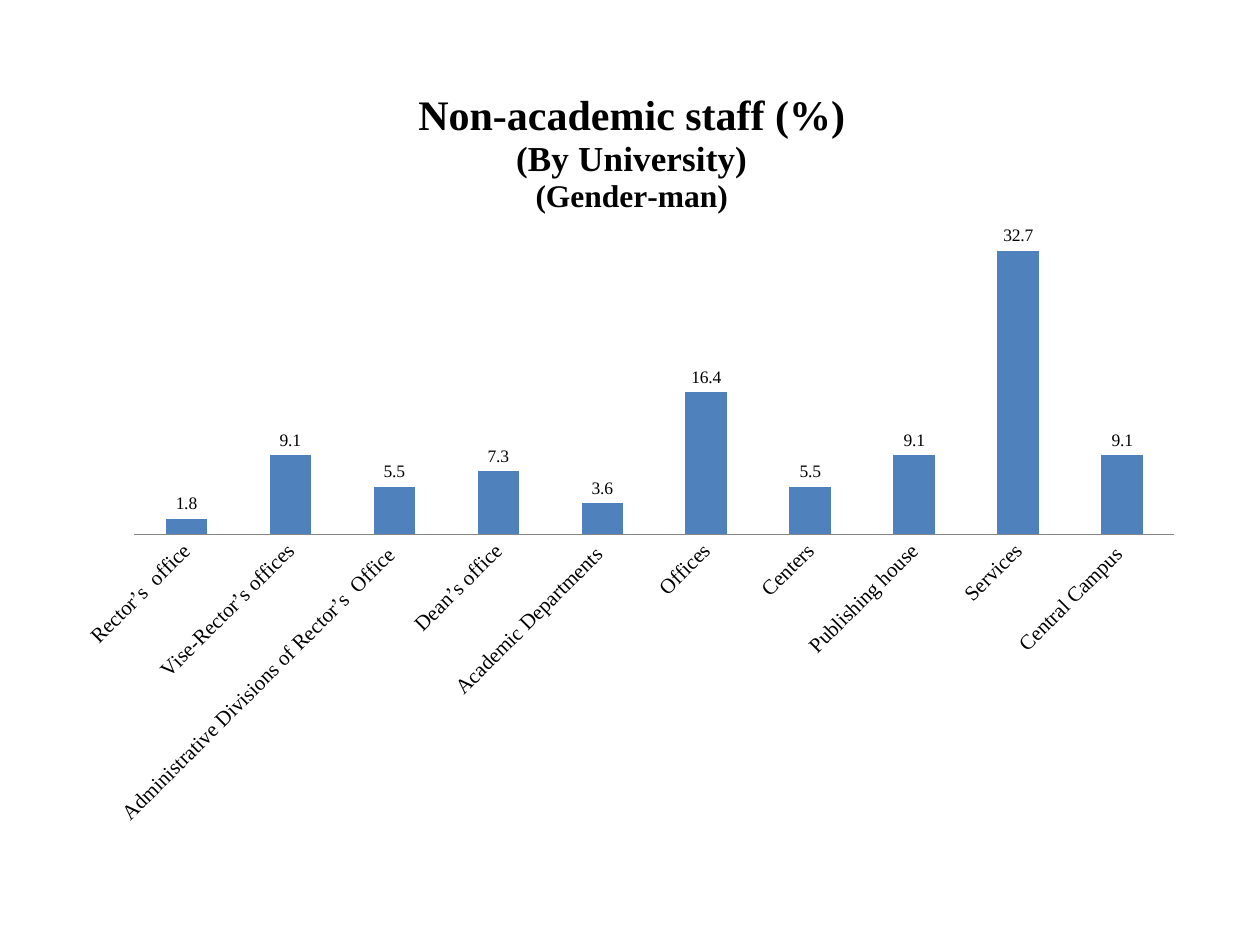
import pptx
import pptx.chart.data
import pptx.dml.color
import pptx.enum.chart
import pptx.oxml
import pptx.oxml.ns
import pptx.util

WIDE, HIGH = 10, 7.5
FACE = "Times New Roman"
COLORS = {"bar": "4F81BD", "text": "000000", "axis": "868686"}
HEADS = [("Non-academic staff (%)", 24), ("(By University)", 20),
         ("(Gender-man)", 18)]
STAFF = [
    ("Rector’s  office", 1.8),
    ("Vise-Rector’s offices", 9.1),
    (" Administrative Divisions of Rector’s  Office ", 5.5),
    ("Dean’s office", 7.3),
    ("Academic Departments ", 3.6),
    ("Offices", 16.4),
    ("Centers", 5.5),
    ("Publishing house", 9.1),
    ("Services", 32.7),
    ("Central Campus ", 9.1),
]


def color(name):
    return pptx.dml.color.RGBColor.from_string(COLORS[name])


def style(font, size, face=FACE, bold=False):
    font.name, font.size, font.bold = face, pptx.util.Pt(size), bold
    font.color.rgb = color("text")


def place(node, index, inner=False, **shares):
    """Set a manual layout, in shares of the chart's size."""
    for old in node.findall(pptx.oxml.ns.qn("c:layout")):
        node.remove(old)
    modes = {"xMode": "edge", "yMode": "edge"}
    if inner:
        modes = {"layoutTarget": "inner", **modes}
    marks = "".join(f'<c:{key} val="{val}"/>'
                    for key, val in {**modes, **shares}.items())
    node.insert(index, pptx.oxml.parse_xml(
        f'<c:layout {pptx.oxml.ns.nsdecls("c")}>'
        f'<c:manualLayout>{marks}</c:manualLayout></c:layout>'))


def add_chart(slide):
    data = pptx.chart.data.CategoryChartData(number_format="0.0")
    data.categories = [name for name, _ in STAFF]
    data.add_series("Series 1", [val for _, val in STAFF])
    box = [pptx.util.Inches(n) for n in
           (0.05 * WIDE, 0.0625 * HIGH, 0.9 * WIDE, 0.83 * HIGH)]
    kind = pptx.enum.chart.XL_CHART_TYPE.COLUMN_CLUSTERED
    chart = slide.shapes.add_chart(kind, *box, data).chart
    chart.has_legend = False
    style(chart.font, 10, "Calibri")
    place(chart.plots[0]._element.getparent(), 0, inner=True,
          x=0.063, y=0.219, w=0.917, h=0.387)
    return chart


def set_title(chart):
    title = chart.chart_title
    frame = title.text_frame
    for i, (text, size) in enumerate(HEADS):
        para = frame.add_paragraph() if i else frame.paragraphs[0]
        run = para.add_run()
        run.text = text
        style(run.font, size, bold=True)
    title.include_in_layout = False
    place(title._element, 1, x=0.31, y=0.035)


def set_bars(chart):
    plot = chart.plots[0]
    plot.gap_width, plot.overlap = 150, -25
    plot.vary_by_categories = False
    fill = plot.series[0].format.fill
    fill.solid()
    fill.fore_color.rgb = color("bar")
    # Values above the bars
    plot.has_data_labels = True
    labels = plot.data_labels
    labels.show_value = True
    labels.number_format, labels.number_format_is_linked = "0.0", False
    labels.position = pptx.enum.chart.XL_LABEL_POSITION.OUTSIDE_END
    style(labels.font, 10)


def set_axes(chart):
    none = pptx.enum.chart.XL_TICK_MARK.NONE
    cats, vals = chart.category_axis, chart.value_axis
    cats.major_tick_mark = cats.minor_tick_mark = none
    cats.format.line.color.rgb = color("axis")
    cats.format.line.width = pptx.util.Pt(0.75)
    style(cats.tick_labels.font, 12)
    # Slant the names by 45 degrees
    body = cats._element.find(".//" + pptx.oxml.ns.qn("a:bodyPr"))
    body.set("rot", str(-45 * 60000))
    body.set("vert", "horz")
    vals.minimum_scale, vals.maximum_scale = 0, 35
    vals.has_major_gridlines = False
    vals.visible = False


def main():
    deck = pptx.Presentation()
    deck.slide_width = pptx.util.Inches(WIDE)
    deck.slide_height = pptx.util.Inches(HIGH)
    slide = deck.slides.add_slide(deck.slide_layouts[6])
    chart = add_chart(slide)
    set_title(chart)
    set_bars(chart)
    set_axes(chart)
    deck.save("out.pptx")


if __name__ == "__main__":
    main()
